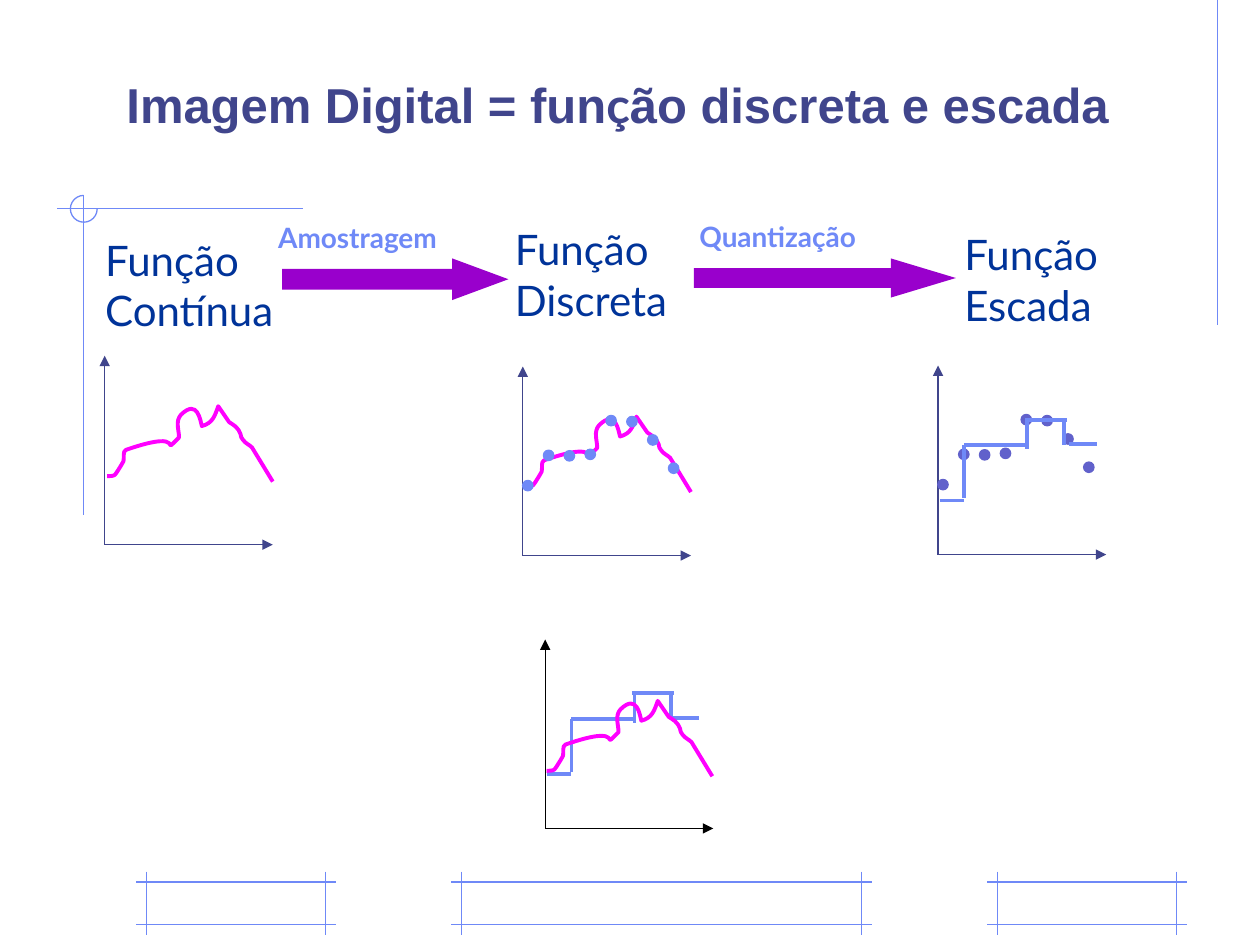
from lxml.etree import SubElement
from pptx import Presentation
from pptx.dml.color import RGBColor
from pptx.enum.shapes import MSO_CONNECTOR, MSO_SHAPE
from pptx.enum.text import MSO_ANCHOR
from pptx.oxml.ns import qn
from pptx.util import Cm, Pt

COLORS = {
    "frame": "6F89F7", "title": "40458C", "heading": "003399",
    "curve": "FF00FF", "arrow": "9900CC", "dot": "6161CB", "black": "000000",
}
THIN, THICK = 0.75, 2.25

AXIS_HEIGHT, AXIS_WIDTH = 3.81, 3.39
DOT_SIZE, DOT_START, DOT_STEP = 0.21, 0.1, 0.42
# Sample heights above the horizontal axis
SAMPLES = [1.41, 2.02, 2.01, 2.04, 2.72, 2.7, 2.33, 1.76]
# Stair segments as x1, height1, x2, height2 from the plot's origin
STAIRS = [
    (0.03, 1.09, 0.53, 1.09), (0.53, 1.14, 0.53, 2.21),
    (0.53, 2.21, 1.80, 2.21), (1.80, 2.13, 1.80, 2.69),
    (1.75, 2.72, 2.59, 2.72), (2.54, 2.74, 2.54, 2.21),
]
LAST_STAIR_WIDTH, LAST_STAIR_HEIGHT = 0.56, 2.23
# Each entry continues from the last point: one point is a line, three a Bézier
CURVE_START = (0, 1.57)
CURVE = [
    [(0.05, 1.57), (0.13, 1.57), (0.16, 1.54)],
    [(0.23, 1.45), (0.33, 1.27), (0.33, 1.27)],
    [(0.35, 1.19), (0.31, 1.07), (0.38, 1.04)],
    [(1.70, 0.58), (1.02, 1.22), (1.45, 0.79)],
    [(1.45, 0.64), (1.37, 0.46), (1.49, 0.33)],
    [(1.83, 0), (1.88, 0.46), (1.91, 0.56)],
    [(2.13, 0.50), (2.17, 0.36), (2.24, 0.16)],
    [(2.46, 0.48)],
    [(2.51, 0.51), (2.55, 0.54), (2.59, 0.57)],
    [(2.64, 0.62), (2.67, 0.66), (2.69, 0.72)],
    [(2.71, 0.75), (2.69, 0.82), (2.74, 0.84)],
    [(2.79, 0.91), (2.87, 0.94), (2.92, 0.99)],
    [(3.34, 1.68)],
]


def rgb(name):
    return RGBColor.from_string(COLORS[name])


class Sketch:
    """Draws on one slide; all lengths are in centimetres."""

    def __init__(self, slide):
        self.shapes = slide.shapes

    def line(self, x1, y1, x2, y2, color="frame", width=THIN, arrow=False):
        line = self.shapes.add_connector(
            MSO_CONNECTOR.STRAIGHT, Cm(x1), Cm(y1), Cm(x2), Cm(y2))
        line.line.color.rgb = rgb(color)
        line.line.width = Pt(width)
        if arrow:
            SubElement(line.line._get_or_add_ln(), qn("a:tailEnd"), type="triangle")
        SubElement(line._element.spPr, qn("a:effectLst"))

    def style(self, shape, fill=None, line=None, width=THIN):
        shape.shadow.inherit = False
        if fill:
            shape.fill.solid()
            shape.fill.fore_color.rgb = rgb(fill)
        else:
            shape.fill.background()
        if line:
            shape.line.color.rgb = rgb(line)
            shape.line.width = Pt(width)
        else:
            shape.line.fill.background()

    def shape(self, kind, x, y, width, height, fill=None, line=None, adjust=()):
        shape = self.shapes.add_shape(kind, Cm(x), Cm(y), Cm(width), Cm(height))
        for index, value in enumerate(adjust):
            shape.adjustments[index] = value
        self.style(shape, fill, line)

    def text(self, x, y, width, height, runs, size, color, bold=False, spacing=None):
        """Add a one-paragraph box; runs are (text, font) pairs."""
        box = self.shapes.add_textbox(Cm(x), Cm(y), Cm(width), Cm(height))
        frame = box.text_frame
        frame.word_wrap = True
        frame.vertical_anchor = MSO_ANCHOR.TOP
        para = frame.paragraphs[0]
        if spacing:
            para.line_spacing = spacing
        for words, font in runs:
            span = para.add_run()
            span.text = words
            span.font.name = font
            span.font.size = Pt(size)
            span.font.bold = bold
            span.font.color.rgb = rgb(color)

    def frame(self, left, right, top=17.78, bottom=18.63, overhang=0.21):
        """Draw four lines that cross at the corners."""
        for y in (top, bottom):
            self.line(left, y, right, y)
        for x in (left + overhang, right - overhang):
            self.line(x, top - overhang, x, bottom + overhang)

    def axes(self, x, y, color="title"):
        self.line(x, y, x, y - AXIS_HEIGHT, color, arrow=True)
        self.line(x, y, x + AXIS_WIDTH, y, color, arrow=True)

    def curve(self, x, y):
        """Lay out all points as lines, then join each three into a Bézier."""
        points = [CURVE_START] + [point for segment in CURVE for point in segment]
        start, *others = [(Cm(x + dx), Cm(y + dy)) for dx, dy in points]
        builder = self.shapes.build_freeform(*start)
        builder.add_line_segments(others, close=False)
        shape = builder.convert_to_shape()
        outline = next(shape._element.iter(qn("a:path")))
        lines = iter(outline.findall(qn("a:lnTo")))
        for segment in CURVE:
            first, *rest = [next(lines) for _ in segment]
            if rest:
                first.tag = qn("a:cubicBezTo")
            for line in rest:
                first.append(line[0])
                outline.remove(line)
        self.style(shape, line="curve", width=THICK)

    def dots(self, x, y, color):
        for index, height in enumerate(SAMPLES):
            self.shape(MSO_SHAPE.FLOWCHART_CONNECTOR,
                       x + DOT_START + index * DOT_STEP - DOT_SIZE / 2,
                       y - height - DOT_SIZE / 2, DOT_SIZE, DOT_SIZE, color, color)

    def stairs(self, x, y, last_x):
        last = (last_x, LAST_STAIR_HEIGHT, last_x + LAST_STAIR_WIDTH, LAST_STAIR_HEIGHT)
        for x1, height1, x2, height2 in [*STAIRS, last]:
            self.line(x + x1, y - height1, x + x2, y - height2, width=THICK)


def main():
    deck = Presentation()
    deck.slide_width, deck.slide_height = Cm(25.4), Cm(19.05)
    sketch = Sketch(deck.slides.add_slide(deck.slide_layouts[6]))

    for left, right in [(9.1, 17.57), (19.9, 23.92), (2.75, 6.77)]:
        sketch.frame(left, right)
    sketch.line(24.55, 0, 24.55, 6.56)
    sketch.line(6.1, 4.21, 1.14, 4.21)
    sketch.line(1.69, 3.94, 1.69, 10.39)
    sketch.shape(MSO_SHAPE.ARC, 1.42, 3.94, 0.54, 0.54, line="frame", adjust=(0, 162))

    sketch.text(2.3, 1.6, 20.4, 1.6,
                [("Imagem Digital = fun", "Arial"), ("ç", "Lato"),
                 ("ão discreta e escada", "Arial")],
                28, "title", bold=True, spacing=0.8)

    continuous, discrete = (2.11, 10.98), (10.54, 11.2)
    stepped, combined = (18.91, 11.18), (10.99, 16.7)
    sketch.axes(*continuous)
    sketch.curve(2.16, 8.03)
    sketch.axes(*discrete)
    sketch.curve(10.59, 8.24)
    sketch.dots(*discrete, "frame")
    sketch.axes(*stepped)
    sketch.dots(*stepped, "dot")
    sketch.stairs(*stepped, 2.64)
    sketch.axes(*combined, "black")
    sketch.stairs(*combined, 2.54)
    sketch.curve(11.02, 13.97)

    for x, y, width, words in [(1.87, 4.6, 4.47, "Função Contínua"),
                               (10.13, 4.39, 3.84, "Função Discreta"),
                               (19.19, 4.49, 3.51, "Função Escada")]:
        sketch.text(x, y, width, 2.29, [(words, "Lato")], 24, "heading")
    for x, width, height, head in [(5.69, 4.56, 0.84, 1.35), (13.99, 5.28, 0.79, 1.66)]:
        sketch.shape(MSO_SHAPE.RIGHT_ARROW, x, 5.21, width, height, "arrow",
                     adjust=(0.5, head))
    for x, y, width, words in [(5.36, 4.32, 4.67, "Amostragem"),
                               (13.85, 4.3, 4.8, "Quantização")]:
        sketch.text(x, y, width, 0.94, [(words, "Lato")], 16, "frame", bold=True)

    deck.save("out.pptx")


if __name__ == "__main__":
    main()
